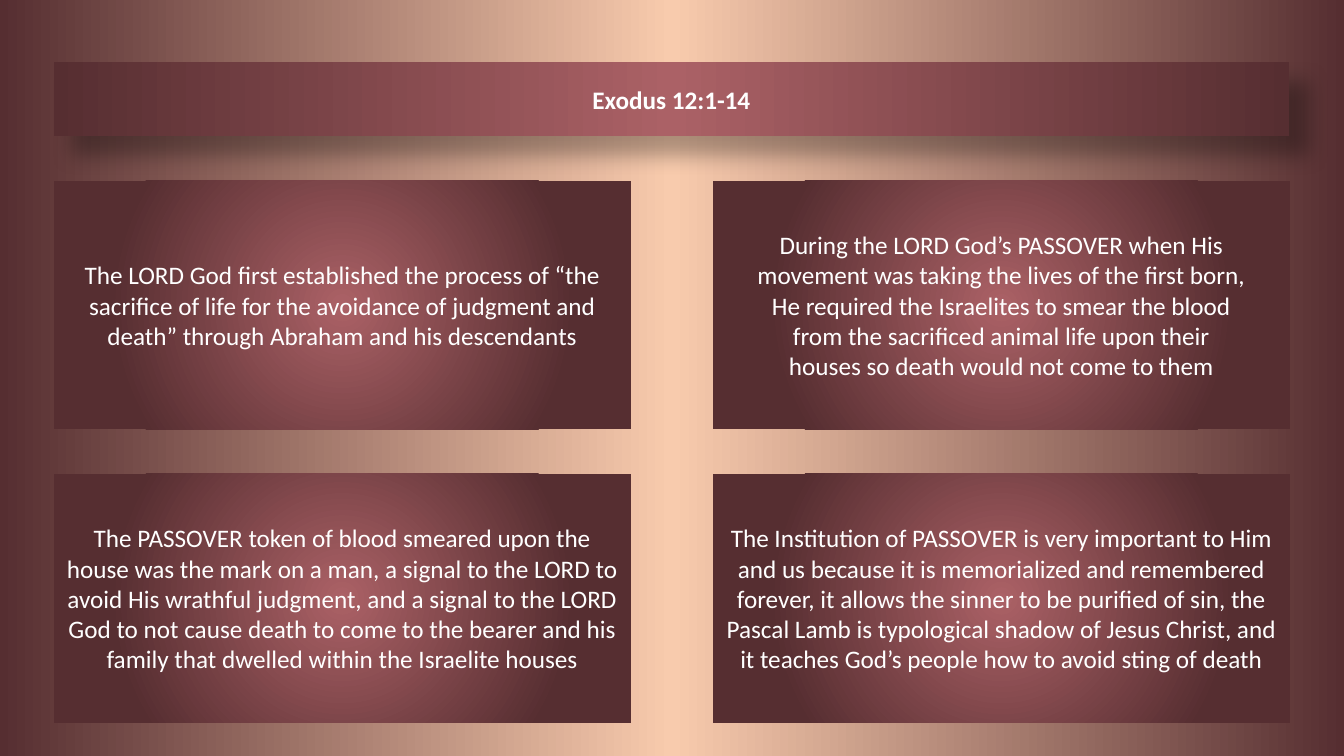
from pptx import Presentation, util as u
from pptx.dml.color import RGBColor
from pptx.enum import text as t
from pptx.oxml import ns, parse_xml

WINE = RGBColor(0x56, 0x2E, 0x31)
ROSE = RGBColor(0xAB, 0x61, 0x66)
PEACH = RGBColor(0xF8, 0xCB, 0xAD)
WHITE = RGBColor(0xFF, 0xFF, 0xFF)

LINEAR = '<a:lin ang="0" scaled="0"/>'
RADIAL = ('<a:path path="circle"><a:fillToRect l="50000" t="50000" '
          'r="50000" b="50000"/></a:path>')


def blend(stops, shade):
    """Make a gradient fill from (percent, colour) stops."""
    marks = "".join(f'<a:gs pos="{pos * 1000}"><a:srgbClr val="{tint}"/></a:gs>'
                    for pos, tint in stops)
    return parse_xml(f'<a:gradFill {ns.nsdecls("a")} rotWithShape="1">'
                     f'<a:gsLst>{marks}</a:gsLst>{shade}</a:gradFill>')


def panel(shape, place, lines, fill, bold=False):
    """Place a placeholder, fill it and write its centred lines."""
    for name, size in zip(("left", "top", "width", "height"), place):
        setattr(shape, name, u.Cm(size))
    shape.element.spPr.append(fill)
    frame = shape.text_frame
    frame.text = "\n".join(lines)
    frame.word_wrap = True
    frame.auto_size = t.MSO_AUTO_SIZE.NONE
    frame.vertical_anchor = t.MSO_ANCHOR.MIDDLE
    look = {"name": "Calibri", "size": u.Pt(18), "bold": bold}
    for para in frame.paragraphs:
        para.alignment = t.PP_ALIGN.CENTER
        para.space_before = u.Pt(0)
        props = para._p.get_or_add_pPr()
        props.set("marL", "0")
        props.set("indent", "0")
        props.append(parse_xml(f'<a:buNone {ns.nsdecls("a")}/>'))
        for run in para.runs:
            for key, value in look.items():
                setattr(run.font, key, value)
            run.font.color.rgb = WHITE


deck = Presentation()
deck.slide_width, deck.slide_height = u.Cm(33.87), u.Cm(19.05)
slide = deck.slides.add_slide(deck.slide_layouts.get_by_name("Comparison"))

# Background
slide.background.fill.solid()
back = slide.element.find(".//" + ns.qn("p:bgPr"))
back.replace(back[0], blend([(0, WINE), (50, PEACH), (100, WINE)], LINEAR))

# Title bar with its shadow
title = slide.shapes.title
panel(title, (1.35, 1.57, 31.14, 1.87), ["Exodus 12:1-14"],
      blend([(0, WINE), (50, ROSE), (100, WINE)], LINEAR), bold=True)
title.element.spPr.append(parse_xml(
    f'<a:effectLst {ns.nsdecls("a")}><a:outerShdw blurRad="{u.Pt(15)}" '
    f'dist="{u.Pt(18)}" dir="2700000" algn="ctr" rotWithShape="0">'
    '<a:srgbClr val="000000"><a:alpha val="30000"/></a:srgbClr>'
    '</a:outerShdw></a:effectLst>'))

# Four points in a two by two grid
points = [
    ["The LORD God first established the process of “the sacrifice of life for "
     "the avoidance of judgment and death” through Abraham and his descendants"],
    ["During the LORD God’s PASSOVER when His movement was taking the lives of "
     "the first born,",
     "He required the Israelites to smear the blood",
     "from the sacrificed animal life upon their",
     "houses so death would not come to them"],
    ["The PASSOVER token of blood smeared upon the house was the mark on a man, "
     "a signal to the LORD to avoid His wrathful judgment, and a signal to the "
     "LORD God to not cause death to come to the bearer and his family that "
     "dwelled within the Israelite houses"],
    ["The Institution of PASSOVER is very important to Him and us because it is "
     "memorialized and remembered forever, it allows the sinner to be purified "
     "of sin, the Pascal Lamb is typological shadow of Jesus Christ, and it "
     "teaches God’s people how to avoid sting of death"],
]
bodies = list(slide.placeholders)[1:]
for i, (body, lines) in enumerate(zip(bodies, points)):
    row, col = divmod(i, 2)
    panel(body, (1.35 + 16.61 * col, 4.55 + 7.39 * row, 14.55, 6.27), lines,
          blend([(0, ROSE), (74, WINE), (100, WINE)], RADIAL))

deck.save("out.pptx")
